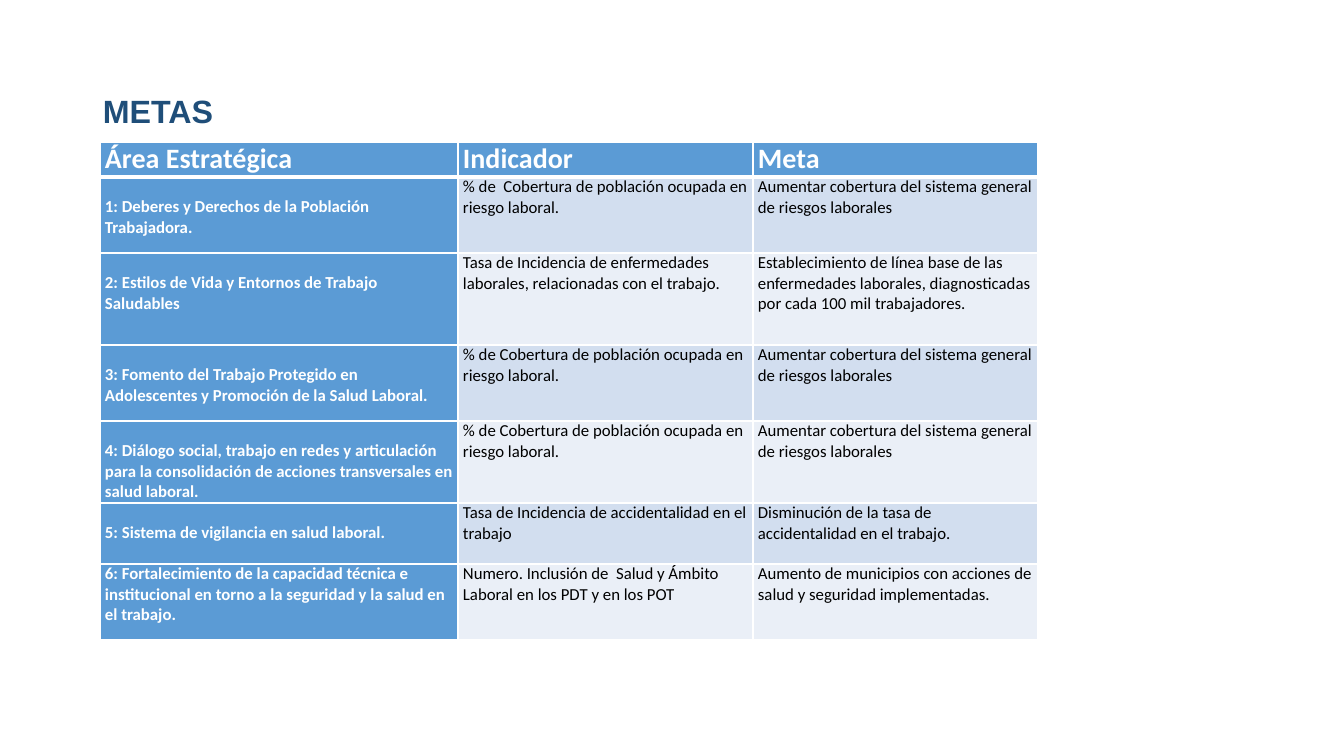
from dataclasses import dataclass

from lxml import etree
from pptx import Presentation, util as u
from pptx.dml.color import RGBColor
from pptx.enum import text
from pptx.oxml import ns


@dataclass(frozen=True)
class Theme:
    navy: str = "1F4E79"
    blue: str = "5B9BD5"
    white: str = "FFFFFF"
    black: str = "000000"
    bands: tuple = ("D2DEEF", "EAEFF7")
    heading_font: str = "Arial"
    body_font: str = "Calibri"
    heading_size: int = 23
    header_size: int = 20
    body_size: int = 12
    rule: int = 1
    header_rule: int = 3


class GoalsSlide:
    """Holds the theme and the current slide, and draws its title and goals table."""

    scale = 12192000 / 1344

    def __init__(self, deck, theme):
        self.theme = theme
        deck.slide_width, deck.slide_height = self.px(1344), self.px(756)
        self.slide = deck.slides.add_slide(deck.slide_layouts[6])

    def px(self, length):
        return u.Emu(round(length * self.scale))

    def wording_run(self, paragraph, wording, font, size, color, bold):
        run = paragraph.add_run()
        run.text = wording
        run.font.name, run.font.size, run.font.bold = font, u.Pt(size), bold
        run.font.color.rgb = RGBColor.from_string(color)

    def title(self, wording, left, top, width, height):
        frame = self.slide.shapes.add_textbox(*map(self.px, (left, top, width, height))).text_frame
        frame.word_wrap = True
        frame.vertical_anchor = text.MSO_ANCHOR.MIDDLE
        heading = frame.paragraphs[0]
        heading.line_spacing = 0.9
        self.wording_run(heading, wording, self.theme.heading_font, self.theme.heading_size,
                         self.theme.navy, True)

    def border(self, cell, side, width):
        line = etree.SubElement(cell._tc.get_or_add_tcPr(), ns.qn(f"a:ln{side}"), w=str(u.Pt(width)))
        fill = etree.SubElement(line, ns.qn("a:solidFill"))
        etree.SubElement(fill, ns.qn("a:srgbClr"), val=self.theme.white)

    def cell(self, cell, wording, row, column, drop):
        theme = self.theme
        header, strong = row == 0, row == 0 or column == 0
        cell.margin_left = cell.margin_right = self.px(5)
        cell.margin_top, cell.margin_bottom = self.px(drop), 0
        heavy = {0: "B", 1: "T"}.get(row)
        for side in "LRTB":
            self.border(cell, side, theme.header_rule if side == heavy else theme.rule)
        cell.fill.solid()
        fill = theme.blue if strong else theme.bands[(row - 1) % 2]
        cell.fill.fore_color.rgb = RGBColor.from_string(fill)
        self.wording_run(cell.text_frame.paragraphs[0], wording, theme.body_font,
                         theme.header_size if header else theme.body_size,
                         theme.white if strong else theme.black, strong)

    def table(self, rows, left, top, widths, heights, area_drops):
        grid = self.slide.shapes.add_table(
            len(rows), len(widths),
            *map(self.px, (left, top, sum(widths), sum(heights)))).table
        for column, width in zip(grid.columns, widths):
            column.width = self.px(width)
        for r, (wordings, height, drop) in enumerate(zip(rows, heights, area_drops)):
            grid.rows[r].height = self.px(height)
            for c, wording in enumerate(wordings):
                self.cell(grid.cell(r, c), wording, r, c, 0 if c else drop)


COVERAGE = "% de Cobertura de población ocupada en riesgo laboral."
RAISE_COVERAGE = "Aumentar cobertura del sistema general de riesgos laborales"
GOALS = [
    ("Área Estratégica", "Indicador", "Meta"),
    ("1: Deberes y Derechos de la Población Trabajadora.",
     "% de  Cobertura de población ocupada en riesgo laboral.", RAISE_COVERAGE),
    ("2: Estilos de Vida y Entornos de Trabajo Saludables",
     "Tasa de Incidencia de enfermedades laborales, relacionadas con el trabajo.",
     "Establecimiento de línea base de las enfermedades laborales, diagnosticadas "
     "por cada 100 mil trabajadores."),
    ("3: Fomento del Trabajo Protegido en Adolescentes y Promoción de la Salud Laboral.",
     COVERAGE, RAISE_COVERAGE),
    ("4: Diálogo social, trabajo en redes y articulación para la consolidación de "
     "acciones transversales en salud laboral.", COVERAGE, RAISE_COVERAGE),
    ("5: Sistema de vigilancia en salud laboral.",
     "Tasa de Incidencia de accidentalidad en el trabajo",
     "Disminución de la tasa de accidentalidad en el trabajo."),
    ("6: Fortalecimiento de la capacidad técnica e institucional en torno a la "
     "seguridad y la salud en el trabajo.",
     "Numero. Inclusión de  Salud y Ámbito Laboral en los PDT y en los POT",
     "Aumento de municipios con acciones de salud y seguridad implementadas."),
]


def main():
    deck = Presentation()
    goals = GoalsSlide(deck, Theme())
    goals.title("METAS", 93, 40, 1159, 146)
    goals.table(GOALS, 100, 142, widths=(358, 295, 285),
                heights=(35, 76, 92, 76, 82, 61, 76),
                area_drops=(0, 20, 20, 20, 20, 20, 0))
    deck.save("out.pptx")


if __name__ == "__main__":
    main()
